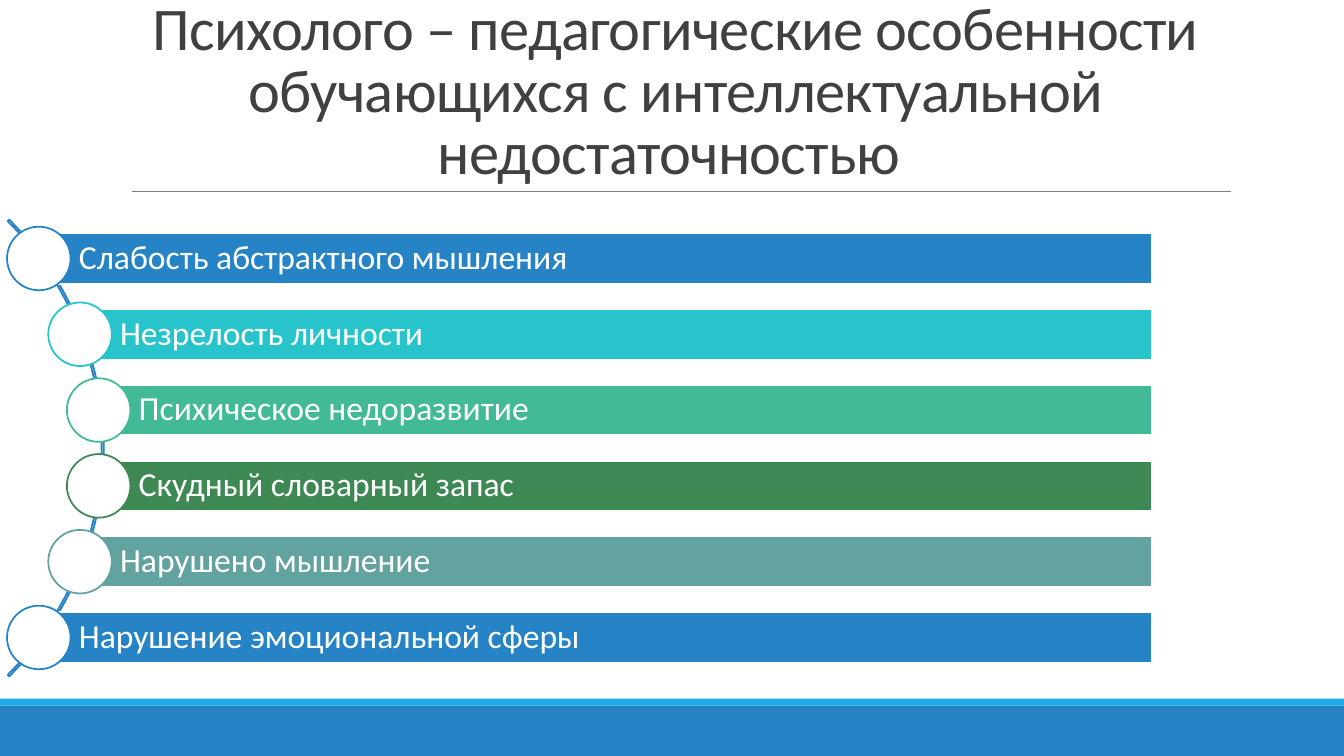
from math import sqrt

from lxml import etree
from pptx import Presentation
from pptx.dml.color import RGBColor
from pptx.enum.shapes import MSO_CONNECTOR, MSO_SHAPE
from pptx.enum.text import MSO_ANCHOR, MSO_AUTO_SIZE, PP_ALIGN
from pptx.oxml.ns import qn
from pptx.util import Pt

RECT, OVAL, ARC = MSO_SHAPE.RECTANGLE, MSO_SHAPE.OVAL, MSO_SHAPE.BLOCK_ARC
LEFT, CENTER = PP_ALIGN.LEFT, PP_ALIGN.CENTER
MIDDLE, BOTTOM = MSO_ANCHOR.MIDDLE, MSO_ANCHOR.BOTTOM

HEADING = "Психолого – педагогические особенности обучающихся с интеллектуальной недостаточностью "
FEATURES = [
    ("Слабость абстрактного мышления", "2683C6"),
    ("Незрелость личности", "28C4CC"),
    ("Психическое недоразвитие", "42BA97"),
    ("Скудный словарный запас", "3E8853"),
    ("Нарушено мышление", "62A39F"),
    ("Нарушение эмоциональной сферы", "2683C6"),
]
FOOTER_BANDS = [(504, 36, "2683C6"), (499, 5, "1CADE4")]
WHITE, BLUE, GREY, DARK = "FFFFFF", "2683C6", "808080", "404040"

SLIDE_W, SLIDE_H = 960, 540
ARC_X, ARC_Y, ARC_SIZE = -156.6, 320, 461.5
ARC_ADJUSTMENTS = (189, 27, 0.0034)
BEAD_RADIUS, BEAD_ORBIT = 22.7, 228.7
BAR_RIGHT, BAR_H, PITCH = 823, 36, 54.14

TITLE_FRAME = {
    "word_wrap": True,
    "auto_size": MSO_AUTO_SIZE.NONE,
    "vertical_anchor": BOTTOM,
    "margin_left": Pt(7.2),
    "margin_right": Pt(7.2),
    "margin_top": Pt(3.6),
    "margin_bottom": Pt(3.6),
}
BAR_FRAME = {
    "word_wrap": True,
    "vertical_anchor": MIDDLE,
    "margin_left": Pt(28.6),
    "margin_right": Pt(4.8),
    "margin_top": Pt(4.8),
    "margin_bottom": Pt(4.8),
}


def paint(target, color):
    target.rgb = RGBColor.from_string(color)


def add_part(kind, x, y, w, h, fill=None, line=None):
    part = slide.shapes.add_shape(kind, Pt(x), Pt(y), Pt(w), Pt(h))
    part.shadow.inherit = False
    if fill:
        part.fill.solid()
        paint(part.fill.fore_color, fill)
    else:
        part.fill.background()
    if line:
        paint(part.line.color, line)
        part.line.width = Pt(1.25)
    else:
        part.line.fill.background()
    return part


def write(holder, text, frame_format, size, color, alignment, spacing):
    frame = holder.text_frame
    for key, value in frame_format.items():
        setattr(frame, key, value)
    paragraph = frame.paragraphs[0]
    paragraph.alignment = alignment
    paragraph.line_spacing = spacing
    run = paragraph.add_run()
    run.text = text
    run.font.name = "Calibri"
    run.font.size = Pt(size)
    paint(run.font.color, color)
    return run


prs = Presentation()
prs.slide_width, prs.slide_height = Pt(SLIDE_W), Pt(SLIDE_H)
slide = prs.slides.add_slide(prs.slide_layouts[5])

for top, height, color in FOOTER_BANDS:
    add_part(RECT, 0, top, SLIDE_W, height, color)

divider = slide.shapes.add_connector(
    MSO_CONNECTOR.STRAIGHT, Pt(94.5), Pt(136.8), Pt(879), Pt(136.8))
divider.line.width = Pt(0.5)
paint(divider.line.color, GREY)
etree.SubElement(divider._element.spPr, qn("a:effectLst"))

title = slide.shapes.title
title.left, title.top, title.width, title.height = Pt(86.4), Pt(22.3), Pt(792), Pt(114.5)
heading = write(title, HEADING, TITLE_FRAME, 43.2, DARK, CENTER, 0.85)
heading.font._element.set("spc", "-50")

arc = add_part(ARC, ARC_X - ARC_SIZE / 2, ARC_Y - ARC_SIZE / 2, ARC_SIZE, ARC_SIZE, line=BLUE)
for index, value in enumerate(ARC_ADJUSTMENTS):
    arc.adjustments[index] = value

for index, (feature, color) in enumerate(FEATURES):
    offset = (index - (len(FEATURES) - 1) / 2) * PITCH
    x = ARC_X + sqrt(BEAD_ORBIT ** 2 - offset ** 2)
    y = ARC_Y + offset
    bar = add_part(RECT, x, y - BAR_H / 2, BAR_RIGHT - x, BAR_H, color, WHITE)
    write(bar, feature, BAR_FRAME, 24, WHITE, LEFT, 0.9)
    add_part(OVAL, x - BEAD_RADIUS, y - BEAD_RADIUS,
             2 * BEAD_RADIUS, 2 * BEAD_RADIUS, WHITE, color)

prs.save("out.pptx")
